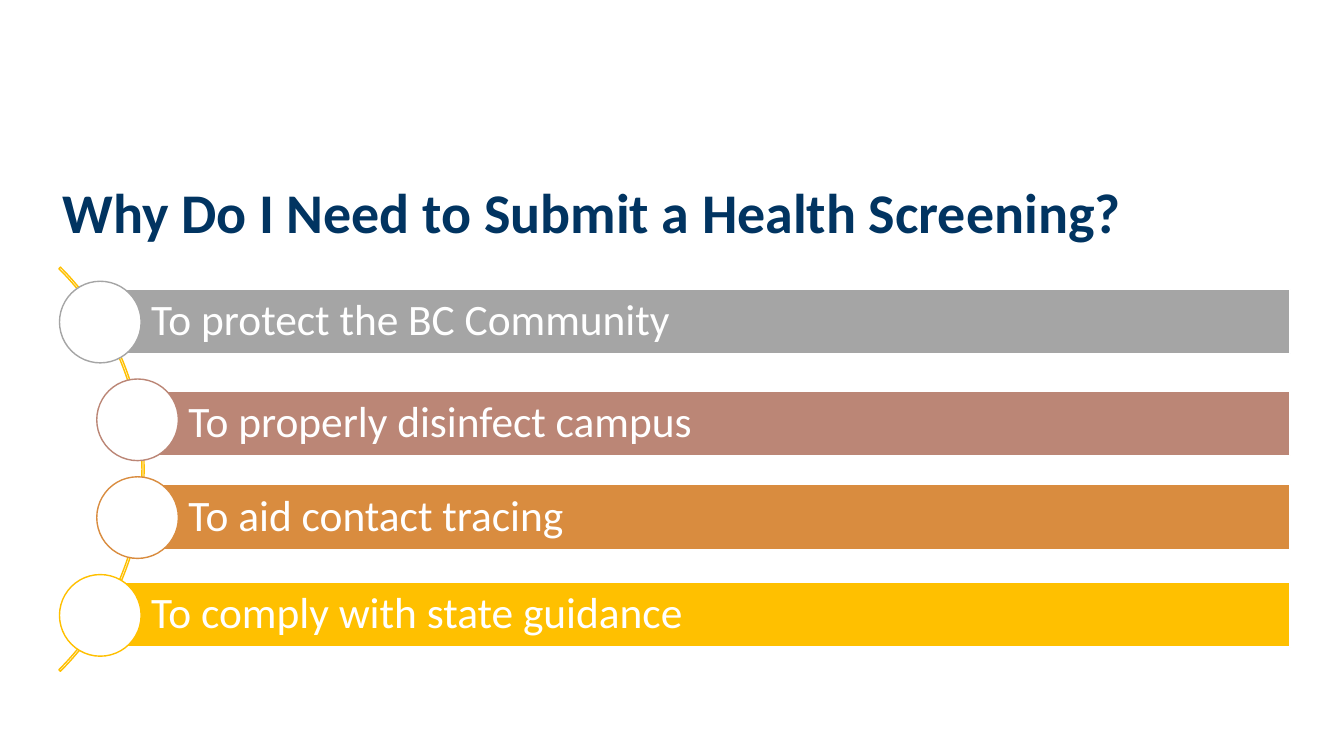
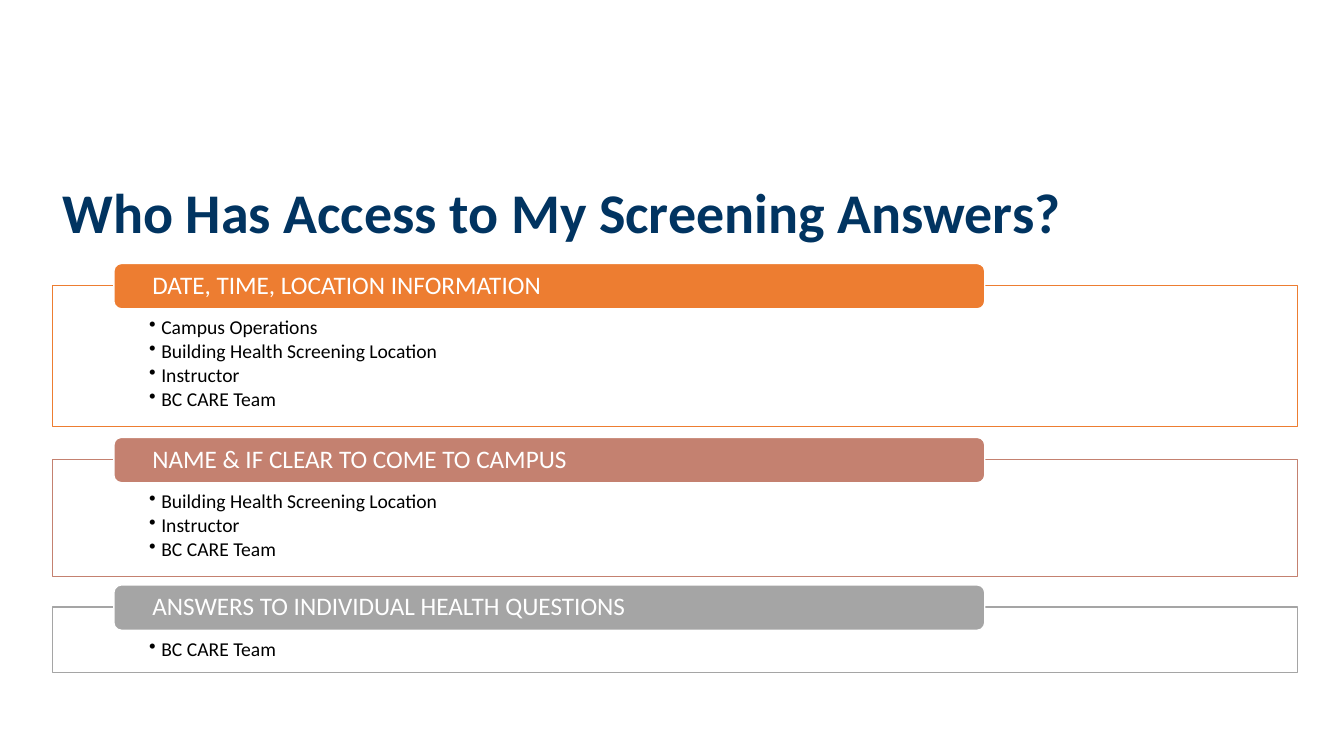
from dataclasses import dataclass

from lxml.etree import SubElement
from pptx import Presentation
from pptx.dml.color import RGBColor
from pptx.enum.shapes import MSO_SHAPE
from pptx.enum.text import MSO_ANCHOR, MSO_AUTO_SIZE, PP_ALIGN
from pptx.oxml.ns import qn
from pptx.util import Pt

# Shared style
FONT = "Calibri"
NAVY, WHITE, BLACK = "013461", "FFFFFF", "000000"
GREY, GOLD, ORANGE = "A5A5A5", "FFC000", "ED7D31"
ROSE, AMBER, CLAY = "BB8676", "D98C3F", "C48170"
LEFT, WIDTH = 37.44, 889.2
TITLE_BOX = (LEFT, 128.88, WIDTH, 41.04)
TITLE_INSETS = (7.2, 3.6, 7.2, 3.6)

# Reasons: a column of circles on an arc, each with a bar
ARC_BOX = (-305.28, 131.04, 408.24, 408.24)
ARC_ADJUSTMENTS = (189, 27, 0.0038)
CIRCLE, CIRCLE_TOP, CIRCLE_PITCH = 58.32, 200.88, 69.84
OUTER_X, INNER_X = 42.48, 69.12
BAR_SHIFT, BAR_HEIGHT, BAR_RIGHT = 28.8, 46.08, 921.6
BAR_INSETS = (36.72, 6.48, 6.48, 6.48)

# Access groups: a framed list under a rounded header
HEADER_X, HEADER_WIDTH, HEADER_HEIGHT, HEADER_RISE = 81.36, 622.08, 32.4, 15.8
HEADER_INSETS = (25.92, 0, 25.92, 0)
PANEL_INSETS = (69.12, 23.04, 69.12, 7.92)
BULLET_INDENT = 8.64

Box = tuple[float, float, float, float]


@dataclass(frozen=True)
class Reason:
    text: str
    colour: str
    x: float
    bar_drop: float = 5.76


@dataclass(frozen=True)
class AccessGroup:
    header: str
    viewers: tuple[str, ...]
    colour: str
    top: float
    height: float


REASONS = (
    Reason("To protect the BC Community", GREY, OUTER_X),
    Reason("To properly disinfect campus", ROSE, INNER_X, 8.64),
    Reason("To aid contact tracing", AMBER, INNER_X),
    Reason("To comply with state guidance", GOLD, OUTER_X),
)

GROUPS = (
    AccessGroup("DATE, TIME, LOCATION INFORMATION",
                ("Campus Operations", "Building Health Screening Location",
                 "Instructor", "BC CARE Team"), ORANGE, 204, 100.8),
    AccessGroup("NAME & IF CLEAR TO COME TO CAMPUS",
                ("Building Health Screening Location", "Instructor",
                 "BC CARE Team"), CLAY, 328.2, 83.5),
    AccessGroup("ANSWERS TO INDIVIDUAL HEALTH QUESTIONS",
                ("BC CARE Team",), GREY, 433.6, 46.8),
)


def rgb(colour: str) -> RGBColor:
    return RGBColor.from_string(colour)


def set_attributes(target, values: dict) -> None:
    for name, value in values.items():
        setattr(target, name, value)


def add_bullet(p) -> None:
    pPr = p._p.get_or_add_pPr()
    pPr.set("marL", str(Pt(BULLET_INDENT)))
    pPr.set("indent", str(-Pt(BULLET_INDENT)))
    SubElement(pPr, qn("a:buChar"), char="•")


def write(sp, lines: tuple[str, ...], size: float, colour: str, insets: Box,
          bold: bool = False, anchor=MSO_ANCHOR.MIDDLE,
          bullets: bool = False) -> None:
    tf = sp.text_frame
    sides = ("margin_left", "margin_top", "margin_right", "margin_bottom")
    set_attributes(tf, {
        "word_wrap": True,
        "auto_size": MSO_AUTO_SIZE.NONE,
        "vertical_anchor": anchor,
        **{side: Pt(inset) for side, inset in zip(sides, insets)},
    })
    for i, line in enumerate(lines):
        p = tf.paragraphs[0] if i == 0 else tf.add_paragraph()
        if bullets:
            add_bullet(p)
        set_attributes(p, {
            "alignment": PP_ALIGN.LEFT,
            "line_spacing": 0.9,
            "space_before": Pt(0),
            "space_after": Pt(2 if bullets else 0),
        })
        r = p.add_run()
        r.text = line
        set_attributes(r.font, {"name": FONT, "size": Pt(size), "bold": bold})
        r.font.color.rgb = rgb(colour)


def add_box(s, kind, box: Box, line: str, fill: str | None = None):
    sp = s.shapes.add_shape(kind, *map(Pt, box))
    sp.shadow.inherit = False
    if fill:
        sp.fill.solid()
        sp.fill.fore_color.rgb = rgb(fill)
    else:
        sp.fill.background()
    sp.line.color.rgb = rgb(line)
    sp.line.width = Pt(1)
    return sp


def add_titled_slide(prs, title: str):
    s = prs.slides.add_slide(prs.slide_layouts[5])
    sp = s.shapes.title
    sides = ("left", "top", "width", "height")
    set_attributes(sp, dict(zip(sides, map(Pt, TITLE_BOX))))
    write(sp, (title,), 40, NAVY, TITLE_INSETS, bold=True,
          anchor=MSO_ANCHOR.TOP)
    return s


def draw_reason(s, reason: Reason, top: float) -> None:
    bar_x = reason.x + BAR_SHIFT
    bar = add_box(s, MSO_SHAPE.RECTANGLE,
                  (bar_x, top + reason.bar_drop, BAR_RIGHT - bar_x, BAR_HEIGHT),
                  WHITE, reason.colour)
    write(bar, (reason.text,), 31, WHITE, BAR_INSETS)
    add_box(s, MSO_SHAPE.OVAL, (reason.x, top, CIRCLE, CIRCLE),
            reason.colour, WHITE)


def draw_group(s, group: AccessGroup) -> None:
    panel = add_box(s, MSO_SHAPE.RECTANGLE,
                    (LEFT, group.top, WIDTH, group.height),
                    group.colour, WHITE)
    write(panel, group.viewers, 14, BLACK, PANEL_INSETS,
          anchor=MSO_ANCHOR.TOP, bullets=True)
    header = add_box(s, MSO_SHAPE.ROUNDED_RECTANGLE,
                     (HEADER_X, group.top - HEADER_RISE,
                      HEADER_WIDTH, HEADER_HEIGHT), WHITE, group.colour)
    write(header, (group.header,), 18, WHITE, HEADER_INSETS)


def main() -> None:
    prs = Presentation()
    prs.slide_width, prs.slide_height = Pt(960), Pt(540)

    # Reasons slide
    s = add_titled_slide(prs, "Why Do I Need to Submit a Health Screening?")
    arc = add_box(s, MSO_SHAPE.BLOCK_ARC, ARC_BOX, GOLD)
    for i, value in enumerate(ARC_ADJUSTMENTS):
        arc.adjustments[i] = value
    for i, reason in enumerate(REASONS):
        draw_reason(s, reason, CIRCLE_TOP + i * CIRCLE_PITCH)

    # Access slide
    s = add_titled_slide(prs, "Who Has Access to My Screening Answers?")
    for group in GROUPS:
        draw_group(s, group)

    prs.save("out.pptx")


if __name__ == "__main__":
    main()
